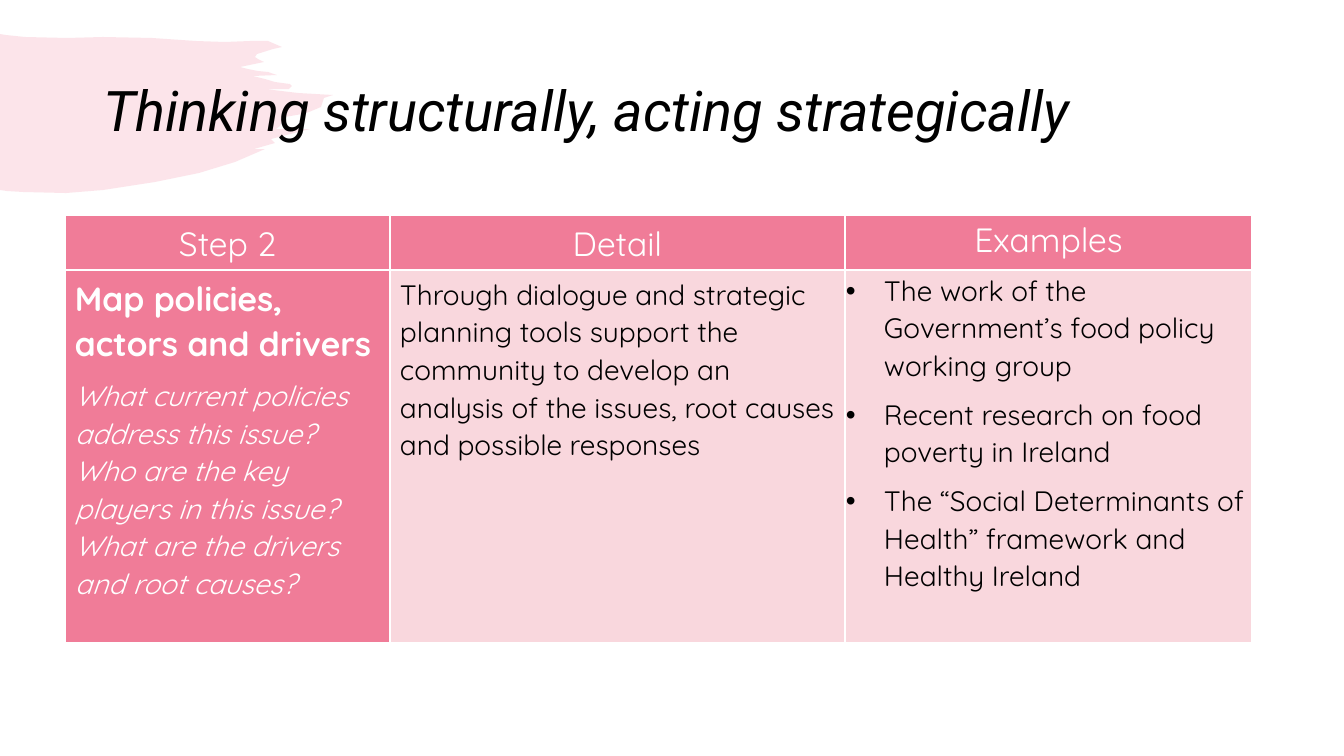
"""Build the "Thinking structurally, acting strategically" slide."""
from dataclasses import dataclass

from lxml import etree
from pptx import Presentation
from pptx.dml.color import RGBColor
from pptx.enum.text import MSO_ANCHOR, MSO_AUTO_SIZE, PP_ALIGN
from pptx.oxml.ns import qn
from pptx.util import Emu, Pt

LEFT, CENTER = PP_ALIGN.LEFT, PP_ALIGN.CENTER
MIDDLE, TOP = MSO_ANCHOR.MIDDLE, MSO_ANCHOR.TOP
NO_AUTOFIT = MSO_AUTO_SIZE.NONE
EMU_PER_PX = 914400 / 100.8
TITLE_ONLY = 5


@dataclass(frozen=True)
class Theme:
    """Colours, fonts and type sizes."""
    rose: str = "F07C98"
    blush: str = "F9D7DD"
    white: str = "FFFFFF"
    black: str = "000000"
    title_font: str = "Roboto"
    body_font: str = "Quicksand"
    title_size: int = 40
    heading_size: int = 24
    body_size: int = 20


THEME = Theme()
HEADING = dict(size=THEME.heading_size, color=THEME.white)
STRONG = dict(HEADING, bold=True)
QUESTION = dict(size=THEME.body_size, color=THEME.white, italic=True)
BODY = dict(size=THEME.body_size, color=THEME.black)

BRUSH_OUTLINE = [
    (0, 34), (6, 35), (25, 37), (67, 38), (103, 37), (152, 38), (196, 41),
    (225, 42), (250, 41), (268, 41), (282, 47), (273, 49), (257, 54), (255, 57),
    (258, 59), (264, 62), (240, 67), (248, 69), (258, 71), (268, 72), (277, 75),
    (253, 76), (265, 79), (275, 82), (282, 83), (290, 84), (292, 86), (289, 89),
    (286, 89), (265, 89), (298, 93), (333, 95), (324, 98), (321, 107), (309, 112),
    (302, 114), (285, 117), (282, 121), (280, 126), (276, 129), (310, 129),
    (271, 139), (275, 143), (254, 149), (265, 149), (235, 162), (199, 173),
    (155, 182), (103, 190), (66, 193), (23, 192), (7, 191), (0, 190),
]
COLUMNS = [325, 455, 407]
ROWS = [54, 373]
HEADINGS = ["Step 2", "Detail", "Examples"]
DETAILS = [
    [("Map policies, actors and drivers", STRONG),
     ("What current policies address this issue? Who are the key players in this "
      "issue? What are the drivers and root causes?", QUESTION)],
    [("Through dialogue and strategic planning tools support the community to develop "
      "an analysis of the issues, root causes and possible responses", BODY)],
    [("The work of the Government’s food policy working group", BODY),
     ("Recent research on food poverty in Ireland", BODY),
     ("The “Social Determinants of Health” framework and Healthy Ireland", BODY)],
]


def px(value):
    """Turn pixels into EMU."""
    return Emu(round(value * EMU_PER_PX))


def assign(target, **values):
    """Set each named attribute on the target."""
    for name, value in values.items():
        setattr(target, name, value)


class SlideBuilder:
    """Holds the theme and the current slide."""

    def __init__(self, presentation, theme):
        """Add a title-only slide."""
        self.theme = theme
        self.slide = presentation.slides.add_slide(presentation.slide_layouts[TITLE_ONLY])

    def style(self, font, size, color, name, bold=False, italic=False):
        """Format one font."""
        assign(font, size=Pt(size), name=name, bold=bold, italic=italic)
        font.color.rgb = RGBColor.from_string(color)

    def title(self, text, left, top, width, height):
        """Place and format the title placeholder."""
        shape = self.slide.shapes.title
        assign(shape, left=px(left), top=px(top), width=px(width), height=px(height))
        frame = shape.text_frame
        assign(frame, text=text, word_wrap=True, auto_size=NO_AUTOFIT,
               vertical_anchor=MIDDLE)
        paragraph = frame.paragraphs[0]
        assign(paragraph, alignment=LEFT, line_spacing=0.9)
        self.style(paragraph.runs[0].font, self.theme.title_size, self.theme.black,
                   self.theme.title_font, italic=True)

    def brush(self, points, alpha):
        """Draw a translucent outline behind the title."""
        builder = self.slide.shapes.build_freeform(*points[0], scale=EMU_PER_PX)
        builder.add_line_segments(points[1:], close=True)
        shape = builder.convert_to_shape()
        shape.shadow.inherit = False
        shape.line.fill.background()
        shape.fill.solid()
        shape.fill.fore_color.rgb = RGBColor.from_string(self.theme.rose)
        color = shape.element.spPr.find(qn("a:solidFill")).find(qn("a:srgbClr"))
        etree.SubElement(color, qn("a:alpha"), val=str(alpha * 1000))
        self.slide.shapes.title.element.addprevious(shape.element)

    def table(self, left, top, columns, rows):
        """Add a plain table with the given column widths and row heights."""
        table = self.slide.shapes.add_table(
            len(rows), len(columns), px(left), px(top),
            px(sum(columns)), px(sum(rows))).table
        assign(table, first_row=False, horz_banding=False)
        for column, width in zip(table.columns, columns):
            column.width = px(width)
        for row, height in zip(table.rows, rows):
            row.height = px(height)
        return table

    def cell(self, cell, content, fill, margins, alignment=LEFT, bulleted=False):
        """Fill a cell with formatted paragraphs."""
        horizontal, vertical = margins
        assign(cell, vertical_anchor=TOP,
               margin_left=px(horizontal), margin_right=px(horizontal),
               margin_top=px(vertical), margin_bottom=px(vertical))
        self.borders(cell)
        cell.fill.solid()
        cell.fill.fore_color.rgb = RGBColor.from_string(fill)
        cell.text = "\n".join(text for text, _ in content)
        for paragraph, (_, look) in zip(cell.text_frame.paragraphs, content):
            assign(paragraph, alignment=alignment, line_spacing=1.07, space_after=Pt(8))
            self.style(paragraph.runs[0].font, name=self.theme.body_font, **look)
            if bulleted:
                self.bullet(paragraph, 38)

    def borders(self, cell):
        """Draw thin white lines on all four sides of a cell."""
        properties = cell._tc.get_or_add_tcPr()
        for side in ("lnL", "lnR", "lnT", "lnB"):
            line = etree.SubElement(properties, qn(f"a:{side}"), w=str(Pt(1)))
            solid = etree.SubElement(line, qn("a:solidFill"))
            etree.SubElement(solid, qn("a:srgbClr"), val=self.theme.white)

    def bullet(self, paragraph, indent):
        """Give a paragraph a hanging bullet."""
        properties = paragraph._p.get_or_add_pPr()
        properties.set("marL", str(px(indent)))
        properties.set("indent", str(-px(indent)))
        etree.SubElement(properties, qn("a:buFont"), typeface="Arial")
        etree.SubElement(properties, qn("a:buChar"), char="•")


def main():
    """Build and save the presentation."""
    presentation = Presentation()
    assign(presentation, slide_width=px(1344), slide_height=px(756))
    builder = SlideBuilder(presentation, THEME)
    builder.title("Thinking structurally, acting strategically", 93, 40, 1159, 146)
    builder.brush(BRUSH_OUTLINE, alpha=20)
    table = builder.table(65, 215, COLUMNS, ROWS)
    for index, (heading, detail) in enumerate(zip(HEADINGS, DETAILS)):
        is_examples = heading == "Examples"
        margins = (1, 1) if is_examples else (10, 5)
        builder.cell(table.cell(0, index), [(heading, HEADING)], THEME.rose,
                     margins, alignment=CENTER)
        builder.cell(table.cell(1, index), detail,
                     THEME.blush if index else THEME.rose, margins, bulleted=is_examples)
    presentation.save("out.pptx")


if __name__ == "__main__":
    main()
